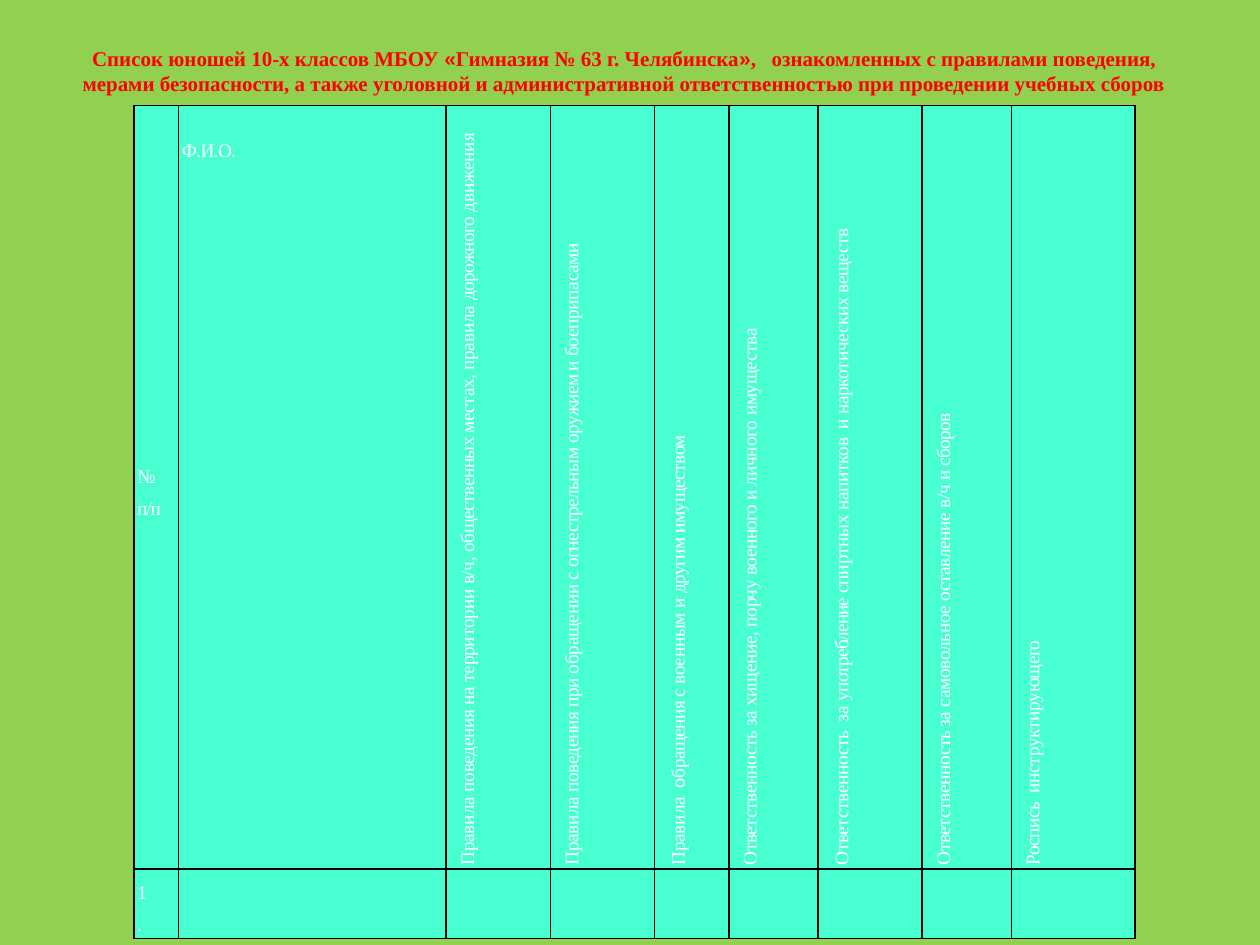
from dataclasses import dataclass

from pptx import Presentation
from pptx.dml.color import RGBColor
from pptx.enum.text import MSO_ANCHOR, PP_ALIGN
from pptx.oxml import parse_xml
from pptx.oxml.ns import nsdecls
from pptx.util import Pt

COLORS = {"page": "92D050", "title": "FF0000", "cell": "47FFD1",
          "text": "FFFFFF", "border": "000000"}
SERIF = "Times New Roman"
COLUMN_WIDTHS = [25.5, 153, 59.5, 59.5, 42.5, 51, 59.5, 51, 70.5]
ROW_HEIGHTS = [436.3, 38.9]


@dataclass
class Span:
    text: str
    spacing: float = 0
    font: str = SERIF


@dataclass
class Entry:
    paragraphs: list[list[Span]]
    vertical: bool = False
    anchor: MSO_ANCHOR = MSO_ANCHOR.MIDDLE
    top_margin: float = 0


def upright(*lines: Span) -> Entry:
    return Entry([[line] for line in lines])


def rotated(*spans: Span) -> Entry:
    return Entry([list(spans)], vertical=True)


TITLE = [
    Span("Список юношей 10-х классов МБОУ "),
    Span("«", font="Arial"),
    Span("Гимназия № 63 г. Челябинска"),
    Span("»", font="Arial"),
    Span(",   ознакомленных с правилами поведения, мерами безопасности, "
         "а также уголовной и административной ответственностью "
         "при проведении учебных сборов"),
]
HEADER = [
    upright(Span("№"), Span("п/п", -0.7)),
    Entry([[Span("Ф.И.О.", -0.4)]], anchor=MSO_ANCHOR.TOP, top_margin=13.5),
    rotated(Span("Правила ", -0.1), Span("поведения на ", -0.2),
            Span("территории ", -0.1), Span("в/ч, ", -0.2),
            Span("общественных местах, ", -0.3), Span("правила ", -0.1),
            Span("дорожного ", -0.3), Span("движения", -0.1)),
    rotated(Span("Правила ", -0.1), Span("поведения при ", -0.3),
            Span("обращении с", -0.2), Span(" огнестрельным о", -0.3),
            Span("ружием и ", -0.4), Span("боеприпасами", -0.2)),
    rotated(Span("Правила", -0.1), Span("  о", font="Calibri"),
            Span("бращения с ", -0.3), Span("военным и ", -0.2),
            Span("другим имуществом", -0.3)),
    rotated(Span("Ответственность за хищение, порчу ", -0.2),
            Span("военного и ", -0.3), Span("личного ", -0.1),
            Span("имущества", -0.2)),
    rotated(Span("Ответствен", -0.2), Span("ность", -0.3),
            Span("  з", font="Calibri"), Span("а у", -0.3),
            Span("потребление ", -0.5), Span("спиртных ", -0.1),
            Span("напитков  и наркотичес", -0.2), Span("ких веществ", -0.3)),
    rotated(Span("Ответствен", -0.2), Span("ность за ", -0.3),
            Span("самовольное оставление в/ч ", -0.2), Span("и сборов", -0.4)),
    rotated(Span("Роспись  ", -0.3), Span("инструктиру", -0.2),
            Span("ющего", -0.4)),
]
FIRST_ROW = [upright(Span("1"), Span("."))] + [None] * (len(HEADER) - 1)


def rgb(name: str) -> RGBColor:
    return RGBColor.from_string(COLORS[name])


def add_span(paragraph, span: Span, size: float, color: str, bold: bool = False) -> None:
    run = paragraph.add_run()
    run.text = span.text
    run.font.size = Pt(size)
    run.font.name = span.font
    run.font.bold = bold
    run.font.color.rgb = rgb(color)
    if span.spacing:
        run.font._element.set("spc", str(round(span.spacing * 100)))


def add_title(page) -> None:
    box = page.shapes.add_textbox(Pt(25.2), Pt(22.3), Pt(663), Pt(36))
    frame = box.text_frame
    frame.word_wrap = True
    frame.vertical_anchor = MSO_ANCHOR.MIDDLE
    paragraph = frame.paragraphs[0]
    paragraph.alignment = PP_ALIGN.CENTER
    for span in TITLE:
        add_span(paragraph, span, 12, "title", bold=True)


def set_borders(cell) -> None:
    """Outline all four sides; border elements must precede the cell fill."""
    properties = cell._tc.get_or_add_tcPr()
    for index, side in enumerate(("lnL", "lnR", "lnT", "lnB")):
        properties.insert(index, parse_xml(
            f'<a:{side} {nsdecls("a")} w="{Pt(1)}"><a:solidFill>'
            f'<a:srgbClr val="{COLORS["border"]}"/></a:solidFill></a:{side}>'))


def fill_entry(cell, entry: Entry) -> None:
    cell.margin_left = cell.margin_right = Pt(2)
    cell.margin_top, cell.margin_bottom = Pt(entry.top_margin), Pt(0)
    cell.vertical_anchor = entry.anchor
    if entry.vertical:
        cell._tc.get_or_add_tcPr().set("vert", "vert270")
    frame = cell.text_frame
    for index, spans in enumerate(entry.paragraphs):
        paragraph = frame.add_paragraph() if index else frame.paragraphs[0]
        paragraph.alignment = PP_ALIGN.JUSTIFY
        paragraph.line_spacing = 1.5
        for span in spans:
            add_span(paragraph, span, 11, "text")


def add_register(page) -> None:
    rows = [HEADER, FIRST_ROW]
    table = page.shapes.add_table(
        len(rows), len(COLUMN_WIDTHS), Pt(76.5), Pt(60.3),
        Pt(sum(COLUMN_WIDTHS)), Pt(sum(ROW_HEIGHTS))).table
    table.first_row = table.horz_banding = False
    for column, width in zip(table.columns, COLUMN_WIDTHS):
        column.width = Pt(width)
    for row, height, entries in zip(table.rows, ROW_HEIGHTS, rows):
        row.height = Pt(height)
        for cell, entry in zip(row.cells, entries):
            cell.fill.solid()
            cell.fill.fore_color.rgb = rgb("cell")
            set_borders(cell)
            if entry:
                fill_entry(cell, entry)


def main() -> None:
    deck = Presentation()
    deck.slide_width, deck.slide_height = Pt(720), Pt(540)
    page = deck.slides.add_slide(deck.slide_layouts[6])
    page.background.fill.solid()
    page.background.fill.fore_color.rgb = rgb("page")
    add_title(page)
    add_register(page)
    deck.save("out.pptx")


if __name__ == "__main__":
    main()
